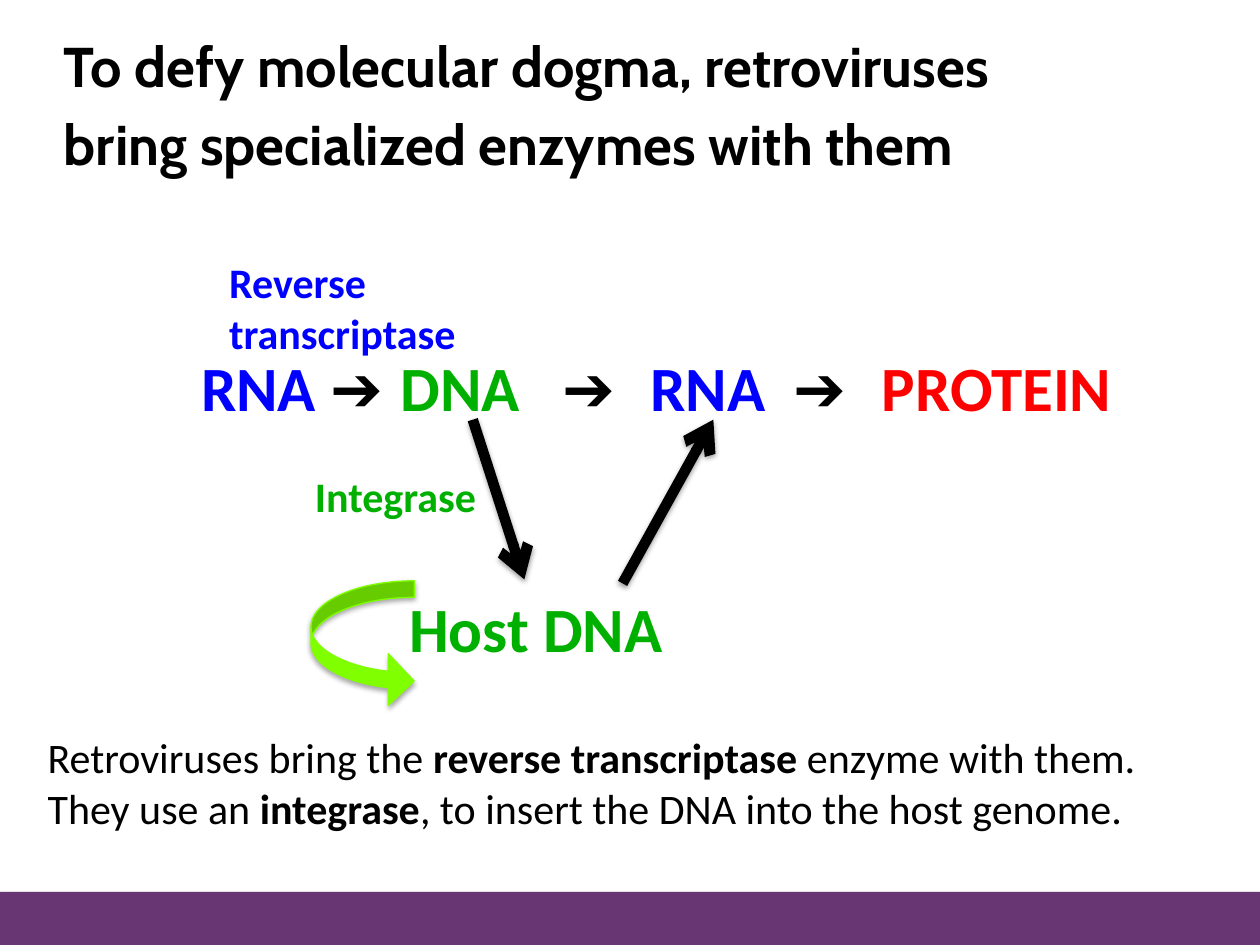
from lxml.etree import SubElement
from pptx import Presentation
from pptx.dml.color import RGBColor
from pptx.enum.shapes import MSO_CONNECTOR as Connector, MSO_SHAPE as Shape
from pptx.enum.text import MSO_ANCHOR as Anchor, MSO_AUTO_SIZE as AutoSize, PP_ALIGN as Align
from pptx.oxml.ns import qn
from pptx.util import Cm, Pt

COLORS = {"black": "000000", "blue": "0000FF", "green": "00B000",
          "red": "FF0000", "lime": "80FF00", "purple": "683672"}

presentation = Presentation()
presentation.slide_width, presentation.slide_height = Cm(25.4), Cm(19.05)
slide = presentation.slides.add_slide(presentation.slide_layouts[6])


def add_text(box, paragraphs, size, font="Calibri", color="black", bold=True,
             frame_format=None, paragraph_format=None):
    frame = slide.shapes.add_textbox(*map(Cm, box)).text_frame
    frame_values = {"word_wrap": True, "auto_size": AutoSize.SHAPE_TO_FIT_TEXT}
    for name, value in (frame_values | (frame_format or {})).items():
        setattr(frame, name, value)
    for index, runs in enumerate(paragraphs):
        paragraph = frame.add_paragraph() if index else frame.paragraphs[0]
        for name, value in (paragraph_format or {}).items():
            setattr(paragraph, name, value)
        for text, changes in runs:
            run = paragraph.add_run()
            run.text = text
            values = {"name": font, "size": Pt(size), "bold": bold, "color": color} | changes
            run.font.color.rgb = RGBColor.from_string(COLORS[values.pop("color")])
            for name, value in values.items():
                setattr(run.font, name, value)


def add_shadow(shape, opacity, distance):
    properties = shape._element.spPr
    effects = SubElement(properties, qn("a:effectLst"))
    shadow = SubElement(effects, qn("a:outerShdw"), blurRad=str(Pt(3.1)),
                        dist=str(Pt(distance)), dir="5400000", rotWithShape="0")
    color = SubElement(shadow, qn("a:srgbClr"), val=COLORS["black"])
    SubElement(color, qn("a:alpha"), val=str(opacity * 1000))


footer = slide.shapes.add_shape(Shape.RECTANGLE, Cm(0), Cm(17.98), Cm(25.4), Cm(1.07))
footer.fill.solid()
footer.fill.fore_color.rgb = RGBColor.from_string(COLORS["purple"])
footer.line.fill.background()
add_shadow(footer, 35, 1.8)

arrow = ("➔ ", {"name": "Arial"})
wide_arrow = ("➔  ", {"name": "Arial"})
add_text((1.8, 6.2, 22.86, 3.18),
         [[("RNA ", {"color": "blue"}), arrow, ("DNA   ", {"color": "green"}), wide_arrow,
           ("RNA  ", {"color": "blue"}), wide_arrow, ("PROTEIN", {"color": "red"})]],
         36, frame_format={"vertical_anchor": Anchor.MIDDLE, "auto_size": AutoSize.NONE},
         paragraph_format={"alignment": Align.CENTER})

strong = {"bold": True}
add_text((0.71, 14.63, 23.95, 2.31),
         [[("Retroviruses bring the ", {}), ("reverse transcriptase ", strong),
           ("enzyme with them. ", {})],
          [("They use an ", {}), ("integrase", strong),
           (", to insert the DNA into the host genome.", {})]],
         24, bold=False, paragraph_format={"alignment": Align.JUSTIFY})

add_text((1.04, 0.51, 24.16, 3.2),
         [[("To defy molecular dogma, retroviruses", {})],
          [("bring specialized enzymes with them", {})]],
         32, font="Cabin", paragraph_format={"space_after": Pt(6)})

add_text((8, 11.76, 6.38, 1.8), [[("Host DNA", {})]], 36, color="green")

for box, lines, color in [
    ((4.37, 5.05, 5.16, 2.31), ["Reverse", "transcriptase"], "blue"),
    ((6.1, 9.37, 3.84, 1.27), ["Integrase"], "green"),
]:
    add_text(box, [[(line, {})] for line in lines], 24, color=color,
             frame_format={"word_wrap": False})

for ends in [(9.53, 8.46, 10.57, 11.68), (12.55, 11.76, 14.38, 8.46)]:
    connector = slide.shapes.add_connector(Connector.STRAIGHT, *map(Cm, ends))
    connector.line.width = Pt(6)
    connector.line.color.rgb = RGBColor.from_string(COLORS["black"])
    SubElement(connector.line._get_or_add_ln(), qn("a:tailEnd"), type="arrow")
    add_shadow(connector, 38, 1.6)

loop = slide.shapes.add_shape(Shape.CURVED_RIGHT_ARROW, Cm(6.27), Cm(11.71), Cm(2.08), Cm(2.54))
for index, value in enumerate([0.16, 0.5, 0.25]):
    loop.adjustments[index] = value
loop.fill.solid()
loop.fill.fore_color.rgb = RGBColor.from_string(COLORS["lime"])
loop.line.color.rgb = RGBColor.from_string(COLORS["lime"])
loop.line.width = Pt(0.75)
add_shadow(loop, 35, 1.8)

presentation.save("out.pptx")
